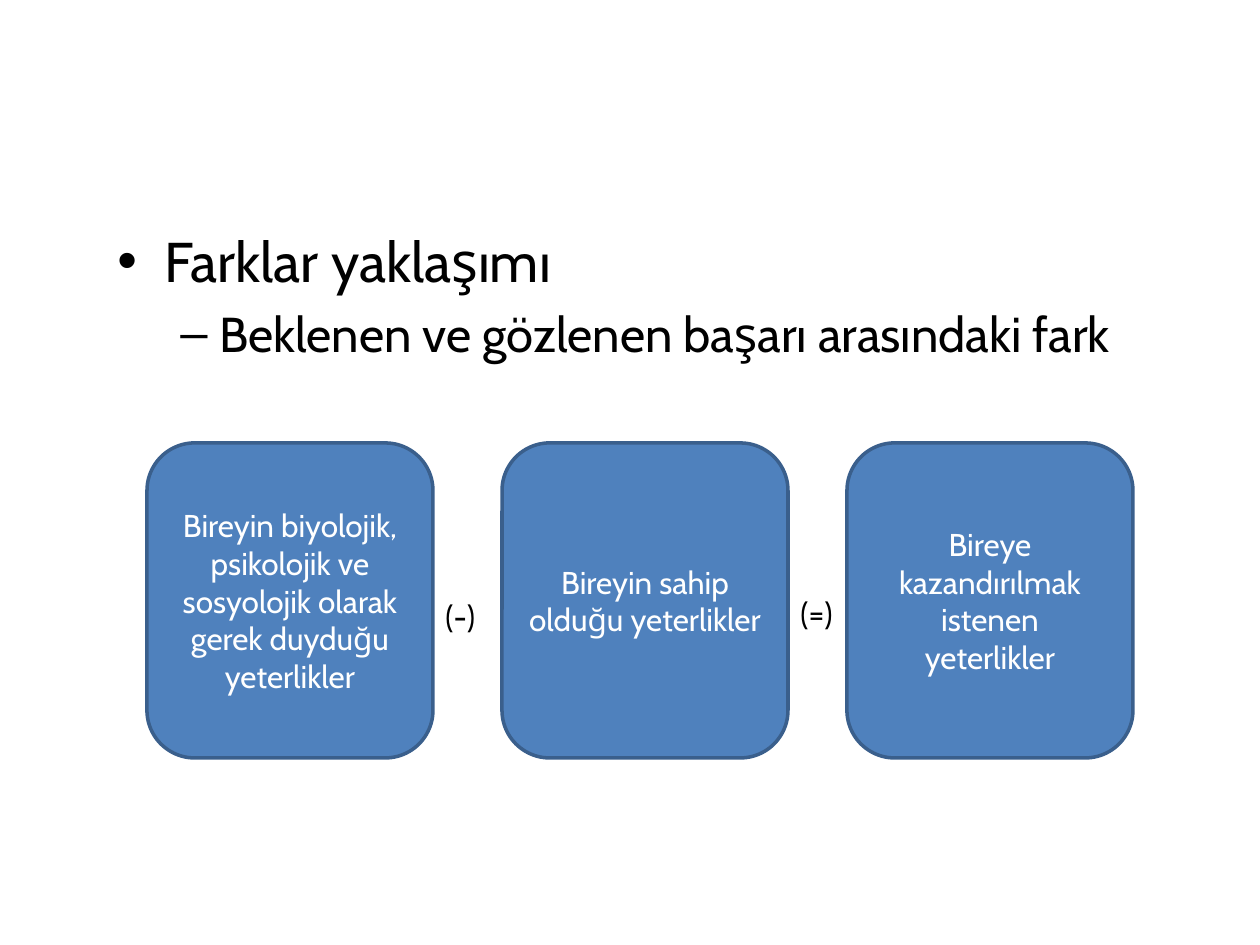
from dataclasses import dataclass
from lxml.etree import SubElement as Sub
from pptx import Presentation
from pptx.dml.color import RGBColor as Color
from pptx.enum.shapes import MSO_SHAPE as Kind
from pptx.enum.text import MSO_ANCHOR as Anchor, PP_ALIGN as Align
from pptx.oxml.ns import qn
from pptx.util import Pt

SCALE = 914400 / 126


@dataclass(frozen=True)
class Theme:
    font: str = "Cabin"
    ink: str = "000000"
    light: str = "FFFFFF"
    fill: str = "4F81BD"
    edge: str = "3A5F8C"
    line: int = 2
    head: int = 32
    sub: int = 28
    small: int = 18


@dataclass(frozen=True)
class Point:
    text: str
    mark: str
    level: int
    size: int
    left: int
    hang: int


@dataclass(frozen=True)
class Card:
    text: str
    left: int


@dataclass(frozen=True)
class Sign:
    text: str
    left: int
    top: int


THEME = Theme()
POINTS = (
    Point("Farklar yaklaşımı", "•", 0, THEME.head, 47, 47),
    Point("Beklenen ve gözlenen başarı arasındaki fark", "–", 1, THEME.sub, 102, 39),
)
CARDS = (
    Card("Bireyin biyolojik, psikolojik ve sosyolojik olarak gerek duyduğu yeterlikler", 147),
    Card("Bireyin sahip olduğu yeterlikler", 502),
    Card("Bireye kazandırılmak istenen yeterlikler", 847),
)
SIGNS = (Sign("(-)", 433, 591), Sign("(=)", 788, 588))


def px(num: int) -> int:
    return round(num * SCALE)


def style(para, size: int, color: str) -> None:
    for run in para.runs:
        run.font.name = THEME.font
        run.font.size = Pt(size)
        run.font.color.rgb = Color.from_string(color)


def add_text(slide, left: int, top: int, width: int, height: int):
    box = slide.shapes.add_textbox(px(left), px(top), px(width), px(height))
    box.text_frame.word_wrap = True
    return box.text_frame


def draw_points(slide, points: tuple[Point, ...]) -> None:
    frame = add_text(slide, 105, 220, 1113, 233)
    frame.text = "\n".join(point.text for point in points)
    for para, point in zip(frame.paragraphs, points):
        para.level = point.level
        para.space_before = Pt(round(point.size * 0.2, 1))
        style(para, point.size, THEME.ink)
        props = para._p.get_or_add_pPr()
        props.set("marL", str(px(point.left)))
        props.set("indent", str(-px(point.hang)))
        Sub(props, qn("a:buFont"), typeface="Arial")
        Sub(props, qn("a:buChar"), char=point.mark)


def draw_card(slide, card: Card) -> None:
    shape = slide.shapes.add_shape(
        Kind.ROUNDED_RECTANGLE, px(card.left), px(443), px(286), px(315))
    shape.shadow.inherit = False
    shape.fill.solid()
    shape.fill.fore_color.rgb = Color.from_string(THEME.fill)
    shape.line.color.rgb = Color.from_string(THEME.edge)
    shape.line.width = Pt(THEME.line)
    frame = shape.text_frame
    frame.word_wrap = True
    frame.vertical_anchor = Anchor.MIDDLE
    frame.text = card.text
    para = frame.paragraphs[0]
    para.alignment = Align.CENTER
    style(para, THEME.small, THEME.light)


def draw_sign(slide, sign: Sign) -> None:
    frame = add_text(slide, sign.left, sign.top, 69, 50)
    frame.text = sign.text
    style(frame.paragraphs[0], THEME.small, THEME.ink)


def main() -> None:
    deck = Presentation()
    deck.slide_width, deck.slide_height = px(1260), px(945)
    slide = deck.slides.add_slide(deck.slide_layouts[6])
    draw_points(slide, POINTS)
    for card in CARDS:
        draw_card(slide, card)
    for sign in SIGNS:
        draw_sign(slide, sign)
    deck.save("out.pptx")


if __name__ == "__main__":
    main()
